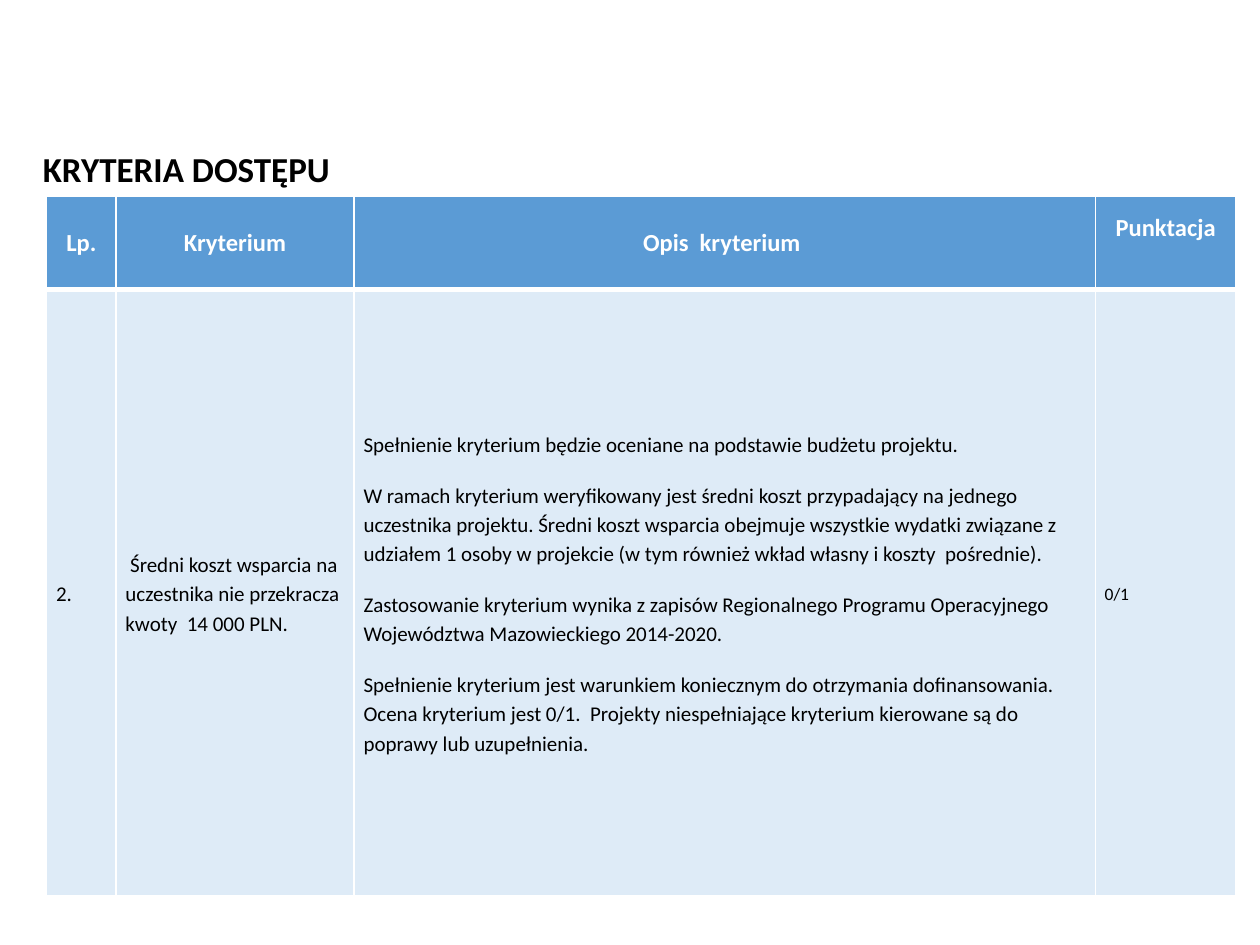
import pptx
import pptx.util
import pptx.dml.color
import pptx.enum.text
import pptx.oxml
import pptx.oxml.ns

Cm = pptx.util.Cm
Pt = pptx.util.Pt
ANCHOR = pptx.enum.text.MSO_ANCHOR
ALIGN = pptx.enum.text.PP_ALIGN

COLOURS = {
    "header": "5B9BD5",
    "body": "DEEBF7",
    "white": "FFFFFF",
    "black": "000000",
}
COLUMN_WIDTHS = [1.4, 4.8, 14.94, 2.84]
ROW_HEIGHTS = [1.88, 12.22]
HEADINGS = ["Lp.", "Kryterium", "Opis  kryterium ", "Punktacja"]
CRITERION = [
    ["2."],
    [" Średni koszt wsparcia na uczestnika nie przekracza \nkwoty  14 000 PLN."],
    [
        "Spełnienie kryterium będzie oceniane na podstawie budżetu projektu.",
        "W ramach kryterium weryfikowany jest średni koszt przypadający na jednego "
        "uczestnika projektu. Średni koszt wsparcia obejmuje wszystkie wydatki związane z "
        "udziałem 1 osoby w projekcie (w tym również wkład własny i koszty  pośrednie).",
        "Zastosowanie kryterium wynika z zapisów Regionalnego Programu Operacyjnego "
        "Województwa Mazowieckiego 2014-2020.",
        "Spełnienie kryterium jest warunkiem koniecznym do otrzymania dofinansowania. "
        "Ocena kryterium jest 0/1.  Projekty niespełniające kryterium kierowane są do "
        "poprawy lub uzupełnienia.",
    ],
    ["0/1"],
]
BODY_SIZES = [12, 12, 12, 10]


class SlideBuilder:
    font = "Calibri"

    def __init__(self, deck):
        self.slide = deck.slides.add_slide(deck.slide_layouts[5])

    def colour(self, name):
        return pptx.dml.color.RGBColor.from_string(COLOURS[name])

    def add_text(self, para, text, size, colour, bold=False):
        for index, line in enumerate(text.split("\n")):
            if index:
                para.add_line_break()
            span = para.add_run()
            span.text = line
            span.font.name = self.font
            span.font.size = Pt(size)
            span.font.bold = bold
            span.font.color.rgb = self.colour(colour)

    def title(self, text, left, top, width, height):
        box = self.slide.shapes.title
        box.left, box.top, box.width, box.height = map(Cm, (left, top, width, height))
        frame = box.text_frame
        frame.word_wrap = True
        frame.auto_size = pptx.enum.text.MSO_AUTO_SIZE.NONE
        frame.vertical_anchor = ANCHOR.MIDDLE
        para = frame.paragraphs[0]
        para.alignment = ALIGN.LEFT
        self.add_text(para, text, 20, "black", bold=True)

    def table(self, left, top, widths, heights):
        frame = self.slide.shapes.add_table(
            len(heights), len(widths), Cm(left), Cm(top), Cm(sum(widths)), Cm(sum(heights)))
        table = frame.table
        for column, width in zip(table.columns, widths):
            column.width = Cm(width)
        for row, height in zip(table.rows, heights):
            row.height = Cm(height)
        return table

    def border(self, cell, side, points):
        properties = cell._tc.get_or_add_tcPr()
        properties.append(pptx.oxml.parse_xml(
            f'<a:ln{side} {pptx.oxml.ns.nsdecls("a")} w="{Pt(points)}"><a:solidFill>'
            f'<a:srgbClr val="{COLOURS["white"]}"/></a:solidFill></a:ln{side}>'))

    def format_cell(self, cell, fill, top_line, bottom_line):
        for side, points in zip("LRTB", (1, 1, top_line, bottom_line)):
            self.border(cell, side, points)
        cell.fill.solid()
        cell.fill.fore_color.rgb = self.colour(fill)
        cell.vertical_anchor = ANCHOR.MIDDLE

    def header_cell(self, cell, text):
        self.format_cell(cell, "header", 1, 3)
        para = cell.text_frame.paragraphs[0]
        para.alignment = ALIGN.CENTER
        self.add_text(para, text, 14, "white", bold=True)

    def body_cell(self, cell, texts, size):
        self.format_cell(cell, "body", 3, 1)
        cell.margin_left = cell.margin_right = Cm(0.19)
        cell.margin_top = cell.margin_bottom = 0
        frame = cell.text_frame
        for index, text in enumerate(texts):
            para = frame.add_paragraph() if index else frame.paragraphs[0]
            para.line_spacing = 1.15
            para.space_before = Pt(6 if index else 0)
            para.space_after = Pt(6)
            self.add_text(para, text, size, "black")


def main():
    deck = pptx.Presentation()
    deck.slide_width = Cm(25.4)
    deck.slide_height = Cm(19.05)
    builder = SlideBuilder(deck)
    table = builder.table(0.94, 3.96, COLUMN_WIDTHS, ROW_HEIGHTS)
    for column, heading in enumerate(HEADINGS):
        builder.header_cell(table.cell(0, column), heading)
        builder.body_cell(table.cell(1, column), CRITERION[column], BODY_SIZES[column])
    table.cell(0, 3).margin_bottom = Cm(0.73)
    builder.title("KRYTERIA DOSTĘPU", 0.61, 2.84, 9.4, 1.12)
    deck.save("out.pptx")


if __name__ == "__main__":
    main()
